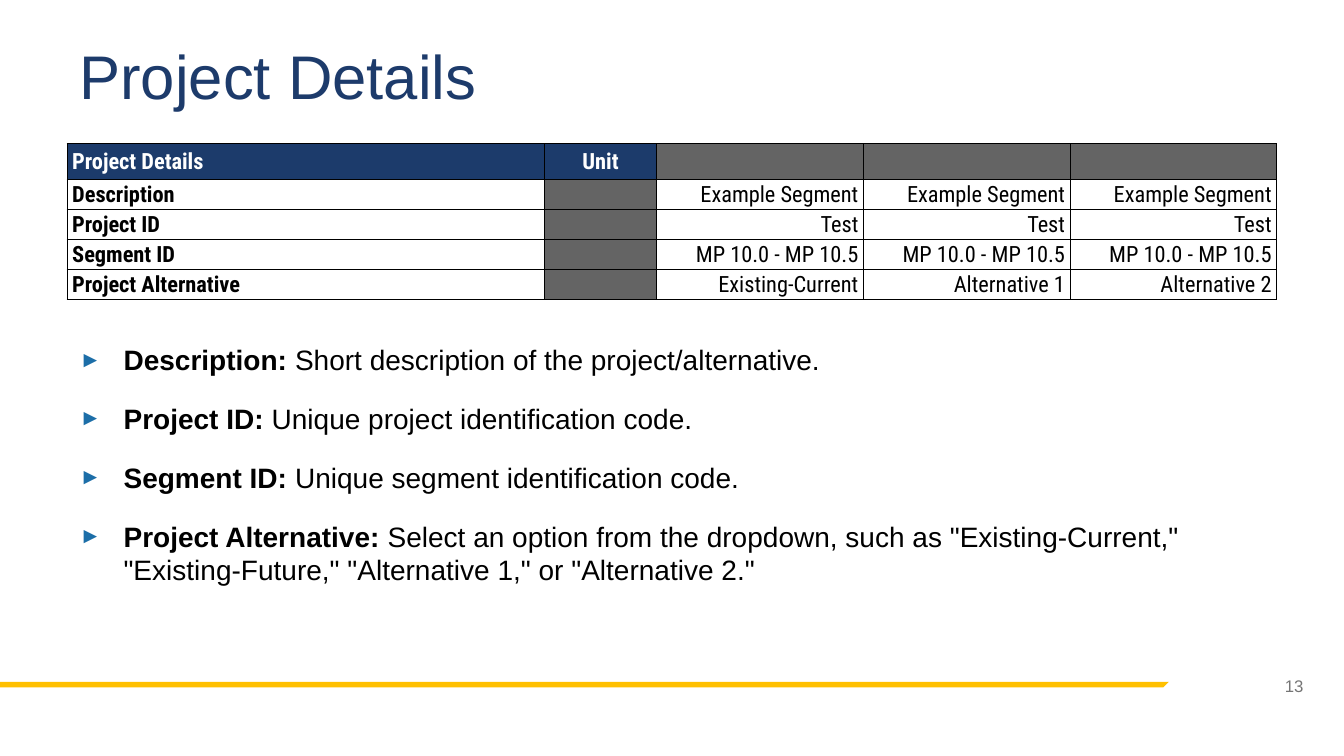
from dataclasses import dataclass

from lxml.etree import SubElement
from pptx import Presentation
from pptx.dml.color import RGBColor
from pptx.enum.text import MSO_ANCHOR as Anchor, PP_ALIGN as Align
from pptx.oxml.ns import qn
from pptx.util import Pt

NAVY, GRAY, BLACK, WHITE = "1C3B6B", "646464", "000000", "FFFFFF"
BODY_FONT, TABLE_FONT = "Arial", "Roboto Condensed"


@dataclass
class Field:
    name: str
    values: list[str]
    meaning: str


FIELDS = [
    Field("Description", ["Example Segment"] * 3,
          "Short description of the project/alternative."),
    Field("Project ID", ["Test"] * 3, "Unique project identification code."),
    Field("Segment ID", ["MP 10.0 - MP 10.5"] * 3,
          "Unique segment identification code."),
    Field("Project Alternative",
          ["Existing-Current", "Alternative 1", "Alternative 2"],
          'Select an option from the dropdown, such as "Existing-Current," '
          '"Existing-Future," "Alternative 1," or "Alternative 2."'),
]


def color(hex_string: str) -> RGBColor:
    return RGBColor.from_string(hex_string)


def set_font(paragraph, name: str, size: float, hex_string: str, bold: bool = False) -> None:
    font = paragraph.font
    font.name, font.size, font.bold = name, Pt(size), bold
    font.color.rgb = color(hex_string)


def add_text_frame(slide, left: float, top: float, width: float, height: float,
                   anchor: Anchor = Anchor.MIDDLE):
    frame = slide.shapes.add_textbox(Pt(left), Pt(top), Pt(width), Pt(height)).text_frame
    frame.word_wrap = True
    frame.vertical_anchor = anchor
    return frame


def add_bullet(paragraph) -> None:
    props = paragraph._p.get_or_add_pPr()
    props.set("marL", str(Pt(31.5)))
    props.set("indent", str(-Pt(31.5)))
    SubElement(SubElement(props, qn("a:buClr")), qn("a:srgbClr"), val="1C6EA8")
    SubElement(props, qn("a:buSzPct"), val="80000")
    SubElement(props, qn("a:buFont"), typeface=BODY_FONT)
    SubElement(props, qn("a:buChar"), char="►")


def add_borders(cell) -> None:
    props = cell._tc.get_or_add_tcPr()
    for side in ("lnL", "lnR", "lnT", "lnB"):
        line = SubElement(props, qn(f"a:{side}"), w=str(Pt(1)))
        SubElement(SubElement(line, qn("a:solidFill")), qn("a:srgbClr"), val=BLACK)


def fill_cell(cell, text: str, fill: str, font_color: str, bold: bool, align: Align) -> None:
    cell.margin_left = cell.margin_right = Pt(3.6)
    cell.margin_top = cell.margin_bottom = 0
    cell.vertical_anchor = Anchor.MIDDLE
    add_borders(cell)
    cell.fill.solid()
    cell.fill.fore_color.rgb = color(fill)
    cell.text = text
    paragraph = cell.text_frame.paragraphs[0]
    paragraph.alignment = align
    set_font(paragraph, TABLE_FONT, 16, font_color, bold)


def add_details_table(slide) -> None:
    widths = [340.8, 80.4] + [147.6] * 3
    heights = [25.8] + [21.45] * len(FIELDS)
    table = slide.shapes.add_table(len(heights), len(widths), Pt(48), Pt(102.6),
                                   Pt(sum(widths)), Pt(sum(heights))).table
    for column, width in zip(table.columns, widths):
        column.width = Pt(width)
    for row, height in zip(table.rows, heights):
        row.height = Pt(height)

    rows = [["Project Details", "Unit", "", "", ""]]
    rows += [[field.name, "", *field.values] for field in FIELDS]
    aligns = [Align.LEFT, Align.CENTER] + [Align.RIGHT] * 3
    for r, texts in enumerate(rows):
        for c, text in enumerate(texts):
            header = r == 0
            fill = GRAY if not text else NAVY if header else WHITE
            fill_cell(table.cell(r, c), text, fill, WHITE if header else BLACK,
                      header or c == 0, aligns[c])


def add_definitions(slide) -> None:
    frame = add_text_frame(slide, 49.7, 241.2, 882, 211.7, Anchor.TOP)
    for i, field in enumerate(FIELDS):
        paragraph = frame.add_paragraph() if i else frame.paragraphs[0]
        if i:
            paragraph.space_before = Pt(18)
        add_bullet(paragraph)
        set_font(paragraph, BODY_FONT, 20, BLACK)
        term = paragraph.add_run()
        term.text = f"{field.name}: "
        term.font.bold = True
        paragraph.add_run().text = field.meaning


def add_footer_bar(slide) -> None:
    outline = slide.shapes.build_freeform(-0.7, 491.2, scale=Pt(1))
    outline.add_line_segments([(0, 487.4), (834.6, 487.4), (830.9, 491.2)], close=True)
    bar = outline.convert_to_shape()
    bar.shadow.inherit = False
    bar.fill.solid()
    bar.fill.fore_color.rgb = color("FFC000")
    bar.line.fill.background()


def main() -> None:
    deck = Presentation()
    deck.slide_width, deck.slide_height = Pt(960), Pt(540)
    slide = deck.slides.add_slide(deck.slide_layouts[6])

    add_footer_bar(slide)

    # Title
    title = add_text_frame(slide, 49.7, 16.6, 828, 80.6).paragraphs[0]
    title.text = "Project Details"
    title.line_spacing = 0.9
    set_font(title, BODY_FONT, 44, "1D3B6B")

    # Page number
    page_number = add_text_frame(slide, 877.7, 480.2, 60.5, 18.7).paragraphs[0]
    page_number.text = "13"
    page_number.alignment = Align.RIGHT
    set_font(page_number, BODY_FONT, 12, "757575")

    # Table and its explanations
    add_details_table(slide)
    add_definitions(slide)

    deck.save("out.pptx")


if __name__ == "__main__":
    main()
